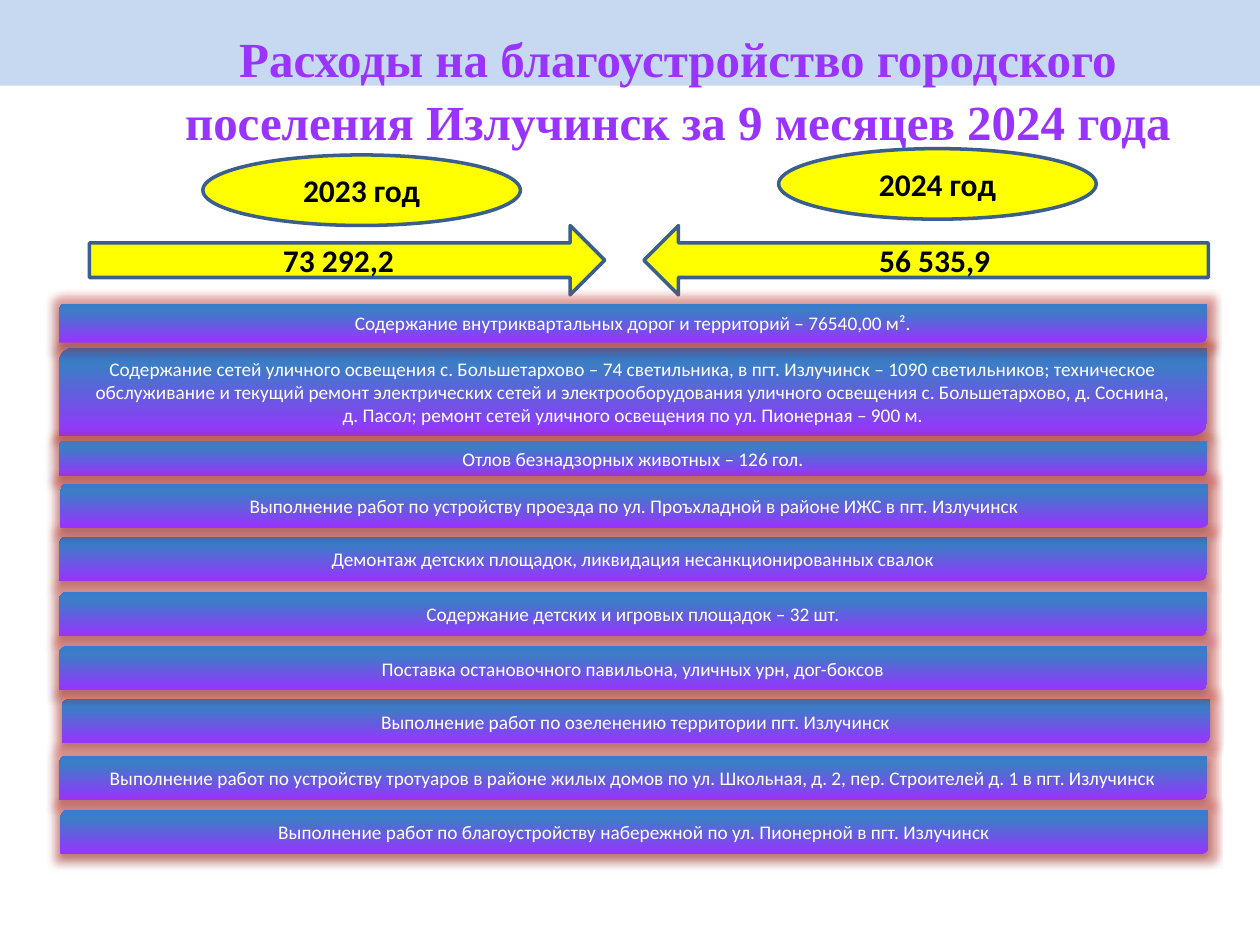
from lxml import etree
from pptx import Presentation
from pptx import util as u
from pptx.dml.color import RGBColor
from pptx.enum import shapes, text
from pptx.oxml import ns

KIND = shapes.MSO_SHAPE
SCALE = 9144
WIDE, TALL = 1000, 750
YEARS = [
    ("2023 год", "73 292,2", KIND.RIGHT_ARROW, (71, 179, 409, 55), (161, 123, 252, 56)),
    ("2024 год", "56 535,9", KIND.LEFT_ARROW, (511, 179, 448, 55), (618, 118, 252, 56)),
]
WORKS = [
    (47, 276, 70, "Содержание сетей уличного освещения с. Большетархово – 74 светильника, "
     "в пгт. Излучинск – 1090 светильников; техническое обслуживание и текущий ремонт "
     "электрических сетей и электрооборудования уличного освещения с. Большетархово, "
     "д. Соснина,\nд. Пасол; ремонт сетей уличного освещения по ул. Пионерная – 900 м."),
    (47, 241, 31, "Содержание внутриквартальных дорог и территорий – 76540,00 м²."),
    (47, 426, 35, "Демонтаж детских площадок, ликвидация несанкционированных свалок"),
    (47, 350, 28, "Отлов безнадзорных животных – 126 гол."),
    (47, 470, 35, "Содержание детских и игровых площадок – 32 шт."),
    (49, 555, 35, "Выполнение работ по озеленению территории пгт. Излучинск"),
    (47, 600, 35, "Выполнение работ по устройству тротуаров в районе жилых домов "
     "по ул. Школьная, д. 2, пер. Строителей д. 1 в пгт. Излучинск"),
    (48, 384, 35, "Выполнение работ по устройству проезда по ул. Проъхладной "
     "в районе ИЖС в пгт. Излучинск"),
    (47, 513, 35, "Поставка остановочного павильона, уличных урн, дог-боксов"),
    (48, 643, 35, "Выполнение работ по благоустройству набережной по ул. Пионерной "
     "в пгт. Излучинск"),
]


def px(n):
    return u.Emu(n * SCALE)


def tint(code):
    return RGBColor.from_string(code)


def node(tag, parts="", **attrs):
    pairs = "".join(f' {key}="{val}"' for key, val in attrs.items())
    return f"<a:{tag}{pairs}>{parts}</a:{tag}>"


def build(xml):
    head, rest = xml.split(">", 1)
    names = head.split(" ", 1)
    names.insert(1, f'xmlns:a="{ns.nsuri("a")}"')
    return etree.fromstring(" ".join(names) + ">" + rest)


def shade(code, alpha):
    return node("srgbClr", node("alpha", val=alpha * 1000), val=code)


def write(frame, words, size, code, font="Calibri", bold=False):
    frame.word_wrap = True
    para = frame.paragraphs[0]
    para.alignment = text.PP_ALIGN.CENTER
    for i, part in enumerate(words.split("\n")):
        if i:
            para.add_line_break()
        run = para.add_run()
        run.text = part
        run.font.size = u.Pt(size)
        run.font.name = font
        run.font.bold = bold
        run.font.color.rgb = tint(code)
    return para


def place(slide, kind, box, fill=None, line=None):
    shape = slide.shapes.add_shape(kind, *map(px, box))
    shape.shadow.inherit = False
    if fill:
        shape.fill.solid()
        shape.fill.fore_color.rgb = tint(fill)
    if line:
        shape.line.color.rgb = tint(line)
        shape.line.width = u.Pt(2)
    else:
        shape.line.fill.background()
    shape.text_frame.vertical_anchor = text.MSO_ANCHOR.MIDDLE
    return shape


def header(slide, box):
    left, top, width, height = box
    band = place(slide, KIND.RECTANGLE, (left, top, width, 68), "C6D9F1")
    title = slide.shapes.title
    title._element.addprevious(band._element)
    title.left, title.top = px(left + 88), px(top + 14)
    title.width, title.height = px(900), px(height - 14)
    frame = title.text_frame
    frame.auto_size = text.MSO_AUTO_SIZE.NONE
    frame.vertical_anchor = text.MSO_ANCHOR.TOP
    para = write(frame, "Расходы на благоустройство городского "
                 "поселения Излучинск за 9 месяцев 2024 года",
                 28, "9933FF", "Times New Roman", True)
    para.line_spacing = 1.07
    edge = node("ln", node("solidFill", node("srgbClr", val="467AB8")), w=10541)
    para.runs[0].font._element.insert(0, build(edge))


def year(slide, name, total, kind, arrow, oval):
    for form, box, words in ((kind, arrow, total), (KIND.OVAL, oval, name)):
        shape = place(slide, form, box, "FFFF00", "3A5F8C")
        write(shape.text_frame, words, 18, "000000", bold=True)


def work(slide, box, words):
    bar = place(slide, KIND.ROUND_2_DIAG_RECTANGLE, box)
    props = bar._element.spPr
    stops = [(0, "9933FF"), (80, "3D7CC7"), (100, "3A7CCB")]
    marks = "".join(node("gs", node("srgbClr", val=code), pos=at * 1000) for at, code in stops)
    fill = node("gradFill", node("gsLst", marks) + node("lin", ang=16200000, scaled=0))
    props.find(ns.qn("a:prstGeom")).addnext(build(fill))
    glow = node("glow", shade("D63B33", 40), rad=101600)
    drop = node("outerShdw", shade("000000", 35), blurRad=39370, dist=22860,
                dir=5400000, rotWithShape=0)
    props.replace(props.find(ns.qn("a:effectLst")), build(node("effectLst", glow + drop)))
    write(bar.text_frame, words, 11, "FFFFFF")


def main():
    deck = Presentation()
    deck.slide_width, deck.slide_height = px(WIDE), px(TALL)
    slide = deck.slides.add_slide(deck.slide_layouts[5])
    header(slide, (0, 0, WIDE, 139))
    for item in YEARS:
        year(slide, *item)
    for left, top, height, words in WORKS:
        work(slide, (left, top, 911, height), words)
    deck.save("out.pptx")


if __name__ == "__main__":
    main()
